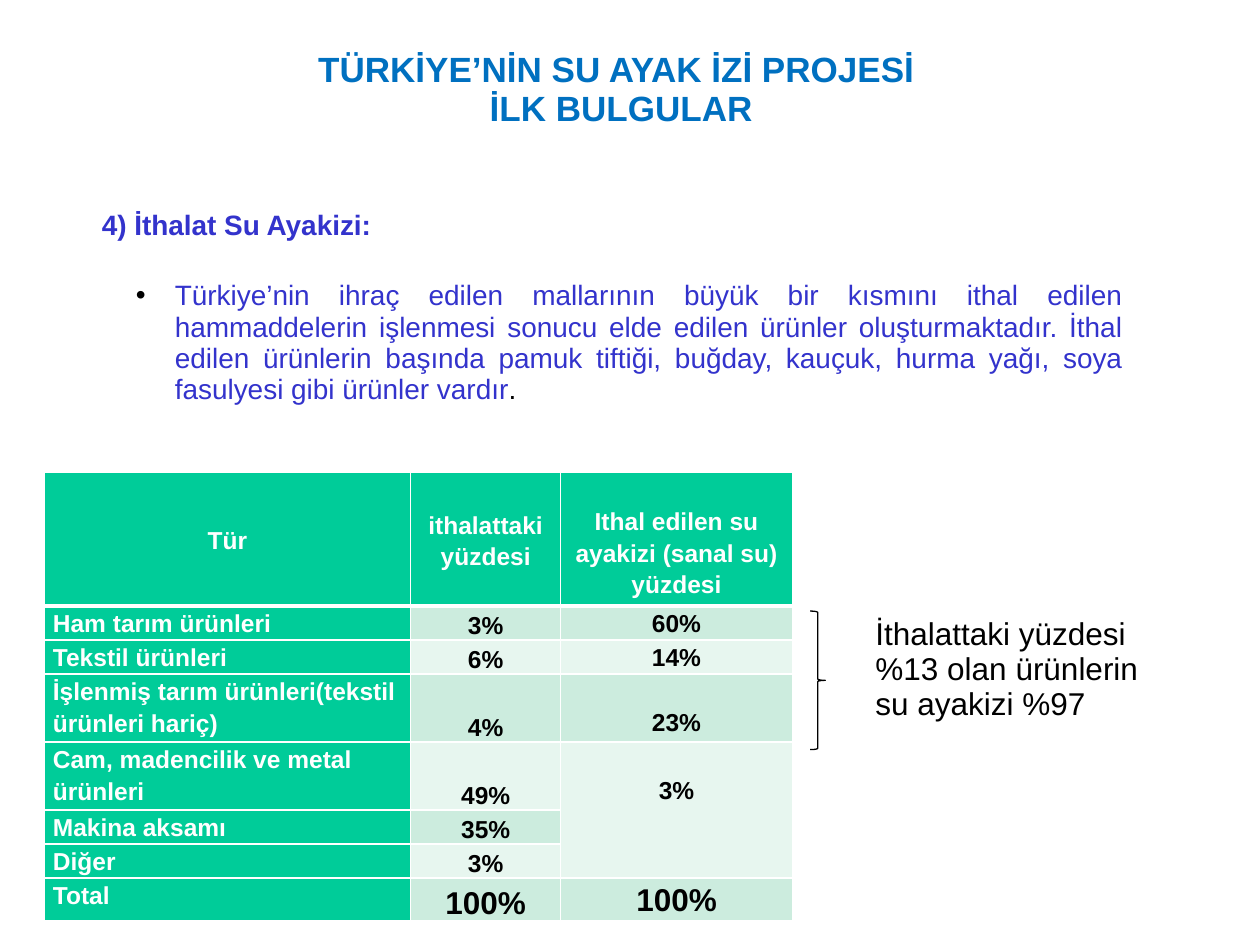
"""Build the slide on the water footprint of imports."""
import dataclasses
import lxml.etree
import pptx
import pptx.dml.color
import pptx.enum.shapes
import pptx.enum.text
import pptx.oxml
import pptx.oxml.ns
import pptx.util

Inches = pptx.util.Inches
Pt = pptx.util.Pt
Align = pptx.enum.text.PP_ALIGN
Anchor = pptx.enum.text.MSO_ANCHOR
qn = pptx.oxml.ns.qn


@dataclasses.dataclass(frozen=True)
class Theme:
    font: str = "Arial"
    blue: str = "0070C0"
    ink: str = "3333CC"
    black: str = "000000"
    white: str = "FFFFFF"
    green: str = "00CC99"
    bands: tuple = ("CCECDE", "E7F6EF")
    title: int = 20
    large: int = 18
    body: int = 16
    small: int = 14
    tight: float = 0.93
    loose: float = 1.15


def tint(code):
    return pptx.dml.color.RGBColor.from_string(code)


class Page:
    def __init__(self, theme, slide):
        self.theme = theme
        self.slide = slide

    def style(self, para, size, color, bold, align, gap):
        para.alignment = align
        para.line_spacing = gap
        for run in para.runs:
            run.font.name = self.theme.font
            run.font.size = Pt(size)
            run.font.bold = bold
            run.font.color.rgb = tint(color)

    def text(self, box, words, size, color, bold=False, align=Align.LEFT):
        frame = self.slide.shapes.add_textbox(*map(Inches, box)).text_frame
        frame.word_wrap = True
        frame.text = words
        for para in frame.paragraphs:
            self.style(para, size, color, bold, align, self.theme.tight)
        return frame

    def bullet(self, box, words, end):
        look = self.theme
        para = self.text(box, words, look.body, look.ink, align=Align.JUSTIFY).paragraphs[0]
        props = para._p.get_or_add_pPr()
        props.set("marL", str(Inches(0.31)))
        props.set("indent", str(-Inches(0.31)))
        color = lxml.etree.SubElement(props, qn("a:buClr"))
        lxml.etree.SubElement(color, qn("a:srgbClr")).set("val", look.black)
        lxml.etree.SubElement(props, qn("a:buFont")).set("typeface", look.font)
        lxml.etree.SubElement(props, qn("a:buChar")).set("char", "•")
        run = para.add_run()
        run.text = end
        run.font.name = look.font
        run.font.size = Pt(look.body)
        run.font.color.rgb = tint(look.black)

    def brace(self, box):
        kind = pptx.enum.shapes.MSO_SHAPE.RIGHT_BRACE
        shape = self.slide.shapes.add_shape(kind, *map(Inches, box))
        shape.shadow.inherit = False
        shape.fill.background()
        shape.line.color.rgb = tint(self.theme.black)
        shape.line.width = Pt(0.75)

    def edge(self, cell, head):
        props = cell._tc.get_or_add_tcPr()
        for place, side in enumerate("LRTB"):
            line = pptx.oxml.parse_xml(
                f'<a:ln{side} {pptx.oxml.ns.nsdecls("a")}><a:solidFill>'
                f'<a:srgbClr val="{self.theme.white}"/></a:solidFill></a:ln{side}>')
            line.set("w", str(Pt(3 if head and side == "B" else 1)))
            props.insert(place, line)

    def cell(self, cell, words, row, col, last, drop):
        look = self.theme
        head, label = row == 0, col == 0
        dark = head or label
        cell.margin_left = cell.margin_right = Inches(0.07)
        cell.margin_top = Inches(drop)
        cell.margin_bottom = 0
        cell.fill.solid()
        cell.fill.fore_color.rgb = tint(look.green if dark else look.bands[(row - 1) % 2])
        self.edge(cell, head)
        if col < 2 and head:
            cell.vertical_anchor = Anchor.MIDDLE
        else:
            cell.vertical_anchor = Anchor.BOTTOM if col == 1 else Anchor.TOP
        cell.text_frame.text = words
        self.style(cell.text_frame.paragraphs[0],
                   look.large if last and not label else look.small,
                   look.white if dark else look.black, True,
                   Align.LEFT if label and not head else Align.CENTER, look.loose)

    def table(self, left, top, wide, high, rows, drops):
        size = len(rows), len(wide)
        box = map(Inches, (left, top, sum(wide), sum(high)))
        table = self.slide.shapes.add_table(*size, *box).table
        for col, width in zip(table.columns, wide):
            col.width = Inches(width)
        for row, height in zip(table.rows, high):
            row.height = Inches(height)
        for r, words in enumerate(rows):
            for c, word in enumerate(words):
                drop = drops.get((r, c), 0)
                self.cell(table.cell(r, c), word, r, c, r == len(rows) - 1, drop)
        return table


def main():
    deck = pptx.Presentation()
    deck.slide_width, deck.slide_height = Inches(10), Inches(7.5)
    look = Theme()
    page = Page(look, deck.slides.add_slide(deck.slide_layouts[6]))

    rows = [
        ("Tür", "ithalattaki yüzdesi", "Ithal edilen su ayakizi (sanal su) yüzdesi"),
        ("Ham tarım ürünleri", "3%", "60%"),
        ("Tekstil ürünleri", "6%", "14%"),
        ("İşlenmiş tarım ürünleri(tekstil ürünleri hariç)", "4%", "23%"),
        ("Cam, madencilik ve metal ürünleri", "49%", "3%"),
        ("Makina aksamı", "35%", ""),
        ("Diğer", "3%", ""),
        ("Total", "100%", "100%"),
    ]
    line = 0.27
    high = [1.06, line, line, 2 * line, 2 * line, line, line, 0.34]
    drops = {(row, 2): 0.25 for row in (0, 3, 4)}
    table = page.table(0.35, 3.75, (2.91, 1.19, 1.84), high, rows, drops)
    table.cell(4, 2).merge(table.cell(6, 2))

    page.brace((6.43, 4.85, 0.12, 1.1))
    page.text((6.85, 4.85, 2.6, 0.95),
              "İthalattaki yüzdesi %13 olan ürünlerin su ayakizi %97", look.large, look.black)
    page.text((1.44, 0.36, 6.98, 1.01), "TÜRKİYE’NİN SU AYAK İZİ PROJESİ \nİLK BULGULAR",
              look.title, look.blue, True, Align.CENTER)
    page.bullet((0.98, 2.18, 8.03, 1.35),
                "Türkiye’nin ihraç edilen mallarının büyük bir kısmını ithal edilen "
                "hammaddelerin işlenmesi sonucu elde edilen ürünler oluşturmaktadır. "
                "İthal edilen ürünlerin başında pamuk tiftiği, buğday, kauçuk, hurma "
                "yağı, soya fasulyesi gibi ürünler vardır", ".")
    page.text((0.71, 1.62, 7.67, 0.35), "4) İthalat Su Ayakizi:", look.body, look.ink, True)
    deck.save("out.pptx")


if __name__ == "__main__":
    main()
